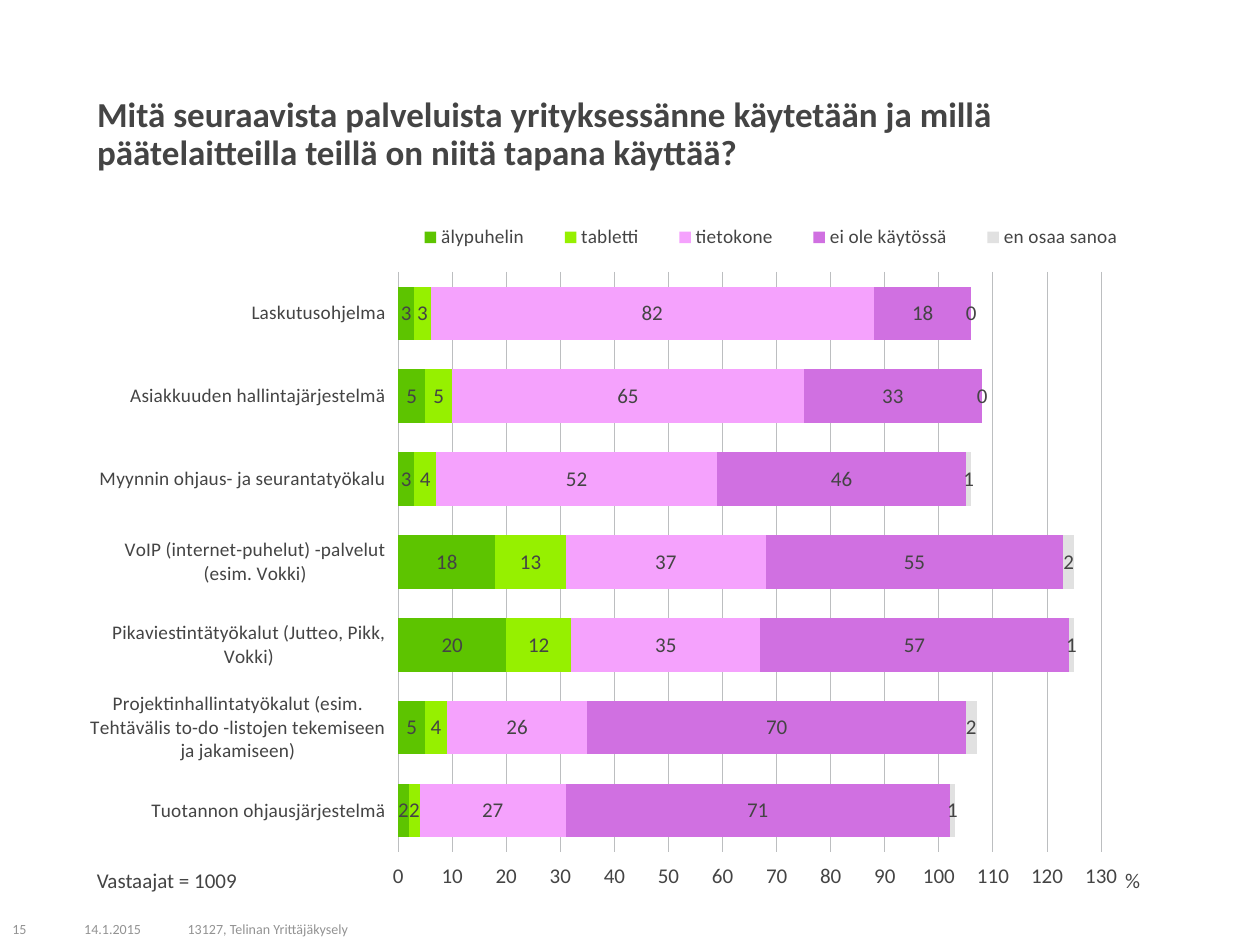
from lxml.etree import SubElement
from pptx import Presentation
from pptx.chart.data import CategoryChartData
from pptx.dml.color import RGBColor
from pptx.enum.chart import (XL_CHART_TYPE, XL_LABEL_POSITION, XL_LEGEND_POSITION,
                             XL_TICK_LABEL_POSITION, XL_TICK_MARK)
from pptx.enum.text import MSO_ANCHOR, PP_ALIGN
from pptx.oxml.ns import qn
from pptx.util import Inches, Pt

TEXT = RGBColor(0x44, 0x44, 0x44)
FOOTER = RGBColor(0x93, 0x93, 0x93)
GRID = RGBColor(0xBC, 0xBE, 0xC0)

CATEGORIES = [
    "Laskutusohjelma",
    "Asiakkuuden hallintajärjestelmä",
    "Myynnin ohjaus- ja seurantatyökalu",
    "VoIP (internet-puhelut) -palvelut (esim. Vokki)",
    "Pikaviestintätyökalut (Jutteo, Pikk, Vokki)",
    "Projektinhallintatyökalut (esim. Tehtävälis to-do -listojen tekemiseen ja jakamiseen)",
    "Tuotannon ohjausjärjestelmä",
]
SERIES = [
    ("älypuhelin", (3, 5, 3, 18, 20, 5, 2), RGBColor(0x5D, 0xC4, 0x00)),
    ("tabletti", (3, 5, 4, 13, 12, 4, 2), RGBColor(0x96, 0xF0, 0x00)),
    ("tietokone", (82, 65, 52, 37, 35, 26, 27), RGBColor(0xF5, 0xA2, 0xFD)),
    ("ei ole käytössä", (18, 33, 46, 55, 57, 70, 71), RGBColor(0xD0, 0x70, 0xE1)),
    ("en osaa sanoa", (0, 0, 1, 2, 1, 2, 1), RGBColor(0xE1, 0xE1, 0xE1)),
]

deck = Presentation()
deck.slide_width, deck.slide_height = Inches(10), Inches(7.5)
page = deck.slides.add_slide(deck.slide_layouts[5])

# Grid of 100 columns and 75 rows
column, row = deck.slide_width / 100, deck.slide_height / 75
LEFT, WIDTH = 6.7, 86.6
CHART_TOP, CHART_HEIGHT = 16.6, 54.8


def style(font, size, color=TEXT, bold=False):
    font.name, font.size, font.bold = "Calibri", Pt(size), bold
    font.color.rgb = color


def set_layout(parent, index, left, top, width=None, height=None):
    """Place a chart part by columns and rows of the page grid."""
    for old in parent.findall(qn("c:layout")):
        parent.remove(old)
    layout = SubElement(parent, qn("c:layout"))
    parent.insert(index, layout)
    manual = SubElement(layout, qn("c:manualLayout"))
    if parent.tag == qn("c:plotArea"):
        SubElement(manual, qn("c:layoutTarget")).set("val", "inner")
    for key in ("x", "y"):
        SubElement(manual, qn(f"c:{key}Mode")).set("val", "edge")
    shares = {"x": (left - LEFT) / WIDTH, "y": (top - CHART_TOP) / CHART_HEIGHT}
    if width:
        shares.update(w=width / WIDTH, h=height / CHART_HEIGHT)
    for key, share in shares.items():
        SubElement(manual, qn(f"c:{key}")).set("val", str(share))


# Title
title = page.shapes.title
title.left, title.top = int(LEFT * column), int(7.2 * row)
title.width, title.height = int(WIDTH * column), int(6.3 * row)
title.text_frame.text = ("Mitä seuraavista palveluista yrityksessänne käytetään ja millä "
                         "päätelaitteilla teillä on niitä tapana käyttää?")
title.text_frame.vertical_anchor = MSO_ANCHOR.TOP
para = title.text_frame.paragraphs[0]
para.alignment, para.line_spacing = PP_ALIGN.LEFT, 0.9
style(para.runs[0].font, 20, bold=True)

# Stacked bar chart
data = CategoryChartData(number_format="General")
data.categories = CATEGORIES
for name, values, color in SERIES:
    data.add_series(name, values)
chart = page.shapes.add_chart(
    XL_CHART_TYPE.BAR_STACKED, int(LEFT * column), int(CHART_TOP * row),
    int(WIDTH * column), int(CHART_HEIGHT * row), data).chart
chart.has_title = False
style(chart.font, 12)
set_layout(chart._chartSpace.chart.plotArea, 0, 31.6, 21.6, 55.8, 46.2)

plot = chart.plots[0]
plot.gap_width, plot.overlap, plot.vary_by_categories = 55, 100, False
for series, (name, values, color) in zip(plot.series, SERIES):
    series.format.fill.solid()
    series.format.fill.fore_color.rgb = color
    labels = series.data_labels
    labels.show_value = True
    labels.number_format, labels.number_format_is_linked = "#,##0", False
    labels.position = XL_LABEL_POSITION.CENTER
    style(labels.font, 12)

# Axes: the reversed order puts the "high" value labels at the bottom
for axis, size in ((chart.category_axis, 11), (chart.value_axis, 12)):
    axis.major_tick_mark = axis.minor_tick_mark = XL_TICK_MARK.NONE
    axis.format.line.fill.background()
    style(axis.tick_labels.font, size)
chart.category_axis.reverse_order = True
chart.category_axis.tick_label_position = XL_TICK_LABEL_POSITION.LOW
scale = chart.value_axis
scale.tick_label_position = XL_TICK_LABEL_POSITION.HIGH
scale.minimum_scale, scale.maximum_scale, scale.major_unit = 0, 130, 10
scale.major_gridlines.format.line.color.rgb = GRID
scale.major_gridlines.format.line.width = Pt(0.5)
scale.axis_title.text_frame.text = "%"
style(scale.axis_title.text_frame.paragraphs[0].runs[0].font, 12)
set_layout(scale.axis_title._element, 1, 89, 68.6)

# Legend
chart.has_legend = True
chart.legend.position = XL_LEGEND_POSITION.TOP
chart.legend.include_in_layout = False
style(chart.legend.font, 11)
set_layout(chart.legend._element, 1, 31, 17.2, 60.4, 3.3)

# Respondent count and footer
for text, left, top, width, height, size, color, anchor in (
    ("Vastaajat = 1009", LEFT, 68.6, 27.7, 2.8, 12, TEXT, MSO_ANCHOR.TOP),
    ("15", 0, 72.5, 4.5, 2.5, 8, FOOTER, MSO_ANCHOR.MIDDLE),
    ("14.1.2015", 5.7, 72.5, 8.2, 2.5, 8, FOOTER, MSO_ANCHOR.MIDDLE),
    ("13127, Telinan Yrittäjäkysely", 13.9, 72.5, 33.1, 2.5, 8, FOOTER, MSO_ANCHOR.MIDDLE),
):
    box = page.shapes.add_textbox(int(left * column), int(top * row),
                                  int(width * column), int(height * row))
    box.text_frame.word_wrap = True
    box.text_frame.vertical_anchor = anchor
    box.text_frame.text = text
    para = box.text_frame.paragraphs[0]
    para.line_spacing = 0.9 if anchor == MSO_ANCHOR.TOP else 1.0
    style(para.runs[0].font, size, color)

deck.save("out.pptx")
